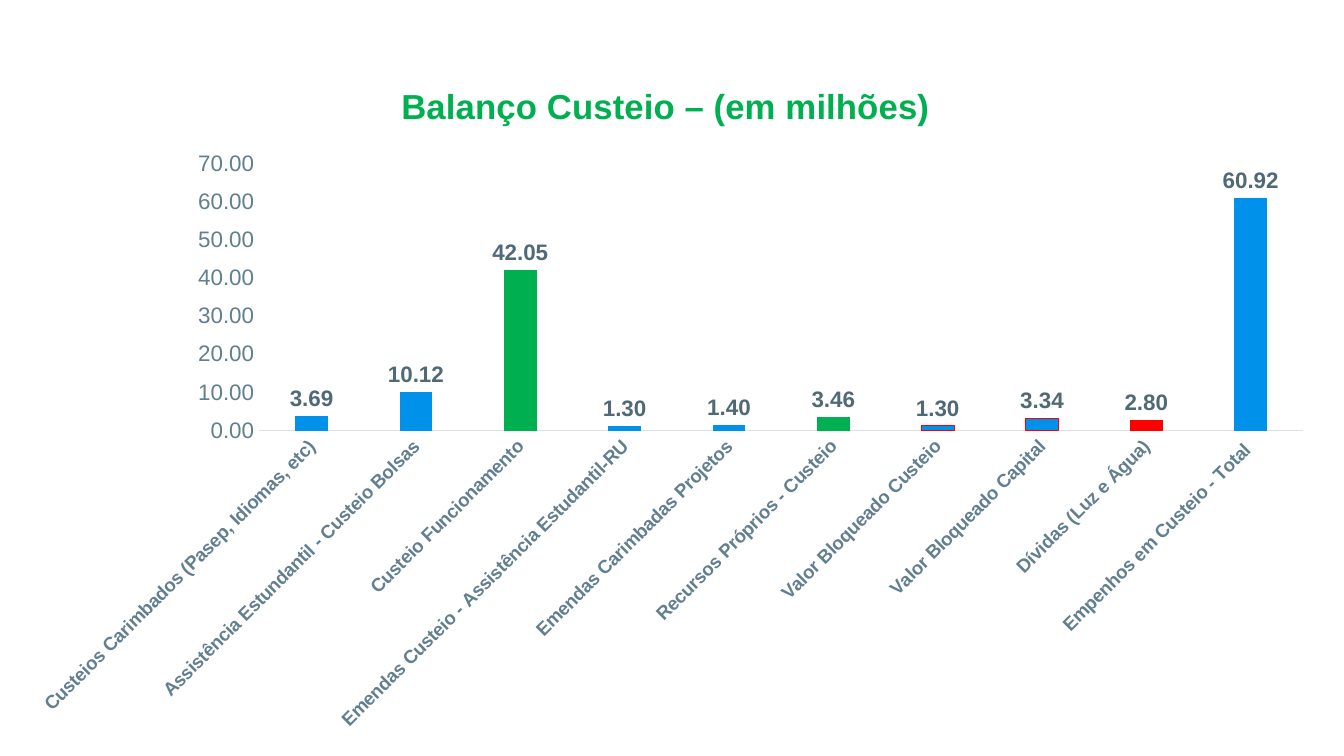
from lxml import etree
from pptx import Presentation
from pptx.chart.data import CategoryChartData
from pptx.dml.color import RGBColor
from pptx.enum.chart import XL_CHART_TYPE, XL_LABEL_POSITION, XL_TICK_MARK
from pptx.oxml import parse_xml
from pptx.oxml.ns import nsdecls, qn
from pptx.util import Inches, Pt

SLIDE_WIDTH = Inches(10)
SLIDE_HEIGHT = SLIDE_WIDTH * 9 // 16
FONT = "Arial"
GREEN = RGBColor(0x00, 0xB0, 0x50)
BLUE = RGBColor(0x00, 0x91, 0xEA)
RED = RGBColor(0xFF, 0x00, 0x00)
INK = RGBColor(0x26, 0x32, 0x38)
AXIS_TEXT = RGBColor(0x61, 0x7F, 0x8F)
LABEL_TEXT = RGBColor(0x50, 0x69, 0x76)
AXIS_LINE = RGBColor(0xDA, 0xE2, 0xE6)

# Category, value in millions, fill, outline
EXPENSES = [
    ("Custeios Carimbados (Pasep, Idiomas, etc)", 3.69, BLUE, None),
    ("Assistência Estundantil - Custeio Bolsas", 10.12, BLUE, None),
    ("Custeio Funcionamento", 42.05, GREEN, None),
    ("Emendas Custeio - Assistência Estudantil-RU", 1.30, BLUE, None),
    ("Emendas Carimbadas Projetos", 1.40, BLUE, None),
    ("Recursos Próprios - Custeio", 3.46, GREEN, None),
    ("Valor Bloqueado Custeio", 1.30, BLUE, RED),
    ("Valor Bloqueado Capital", 3.34, BLUE, RED),
    ("Dívidas (Luz e Água)", 2.80, RED, None),
    ("Empenhos em Custeio - Total ", 60.92, BLUE, None),
]


def style_font(font, size, color, bold=False):
    font.name = FONT
    font.size = Pt(size)
    font.bold = bold
    font.color.rgb = color


def set_layout(parent, position, **values):
    """Place a chart part by shares of the chart's size."""
    for old_layout in parent.findall(qn("c:layout")):
        parent.remove(old_layout)
    layout = parse_xml(f"<c:layout {nsdecls('c')}><c:manualLayout/></c:layout>")
    for name, value in values.items():
        etree.SubElement(layout[0], qn(f"c:{name}"), val=str(value))
    parent.insert(position, layout)


def add_title(chart):
    chart.has_title = True
    title = chart.chart_title
    title.text_frame.text = "Balanço Custeio – (em milhões)"
    style_font(title.text_frame.paragraphs[0].runs[0].font, 18.6, GREEN, True)
    set_layout(title._element, 1, xMode="edge", yMode="edge", x=0.29, y=0.03)


def style_axes(chart):
    category_axis, value_axis = chart.category_axis, chart.value_axis
    for axis in (category_axis, value_axis):
        axis.has_major_gridlines = False
        axis.major_tick_mark = axis.minor_tick_mark = XL_TICK_MARK.NONE
    style_font(category_axis.tick_labels.font, 10, AXIS_TEXT, True)
    category_axis.format.line.color.rgb = AXIS_LINE
    category_axis.format.line.width = Pt(0.75)
    # Category labels climb at 45 degrees
    category_axis._element.find(qn("c:txPr")).find(qn("a:bodyPr")).set("rot", "-2700000")

    style_font(value_axis.tick_labels.font, 12, AXIS_TEXT)
    value_axis.tick_labels.number_format = "0.00"
    value_axis.tick_labels.number_format_is_linked = False
    value_axis.format.line.fill.background()
    value_axis.minimum_scale, value_axis.maximum_scale = 0, 70
    value_axis.major_unit = 10


def style_columns(plot):
    plot.vary_by_categories = False
    plot.gap_width, plot.overlap = 219, -27
    series = plot.series[0]
    series.invert_if_negative = False
    series.format.fill.solid()
    series.format.fill.fore_color.rgb = BLUE
    for index, (_, _, fill, outline) in enumerate(EXPENSES):
        if fill == BLUE and outline is None:
            continue
        column = series.points[index].format
        column.fill.solid()
        column.fill.fore_color.rgb = fill
        if outline is not None:
            column.line.color.rgb = outline
            column.line.width = Pt(0.25)

    labels = series.data_labels
    labels.show_value = True
    labels.number_format = "0.00"
    labels.number_format_is_linked = False
    labels.position = XL_LABEL_POSITION.OUTSIDE_END
    style_font(labels.font, 12, LABEL_TEXT, True)


def add_expense_chart(slide, left, top, width, height):
    chart_data = CategoryChartData(number_format="0.00")
    chart_data.categories = [expense[0] for expense in EXPENSES]
    chart_data.add_series("Series 1", [expense[1] for expense in EXPENSES])
    chart = slide.shapes.add_chart(
        XL_CHART_TYPE.COLUMN_CLUSTERED, left, top, width, height, chart_data
    ).chart
    chart.has_legend = False
    style_font(chart.font, 10, INK)
    add_title(chart)
    style_axes(chart)
    style_columns(chart.plots[0])
    # Inner plot area in hundredths, leaving room below for the slanted labels
    plot_area = chart._chartSpace.chart.plotArea
    set_layout(plot_area, 0, layoutTarget="inner", xMode="edge", yMode="edge",
               x=18.7 / 100, y=15.6 / 100, w=79.3 / 100, h=38.9 / 100)


def main():
    presentation = Presentation()
    presentation.slide_width, presentation.slide_height = SLIDE_WIDTH, SLIDE_HEIGHT
    slide = presentation.slides.add_slide(presentation.slide_layouts[6])
    add_expense_chart(slide, Inches(0.1), Inches(0.42), Inches(9.79), Inches(5.11))
    presentation.save("out.pptx")


if __name__ == "__main__":
    main()
